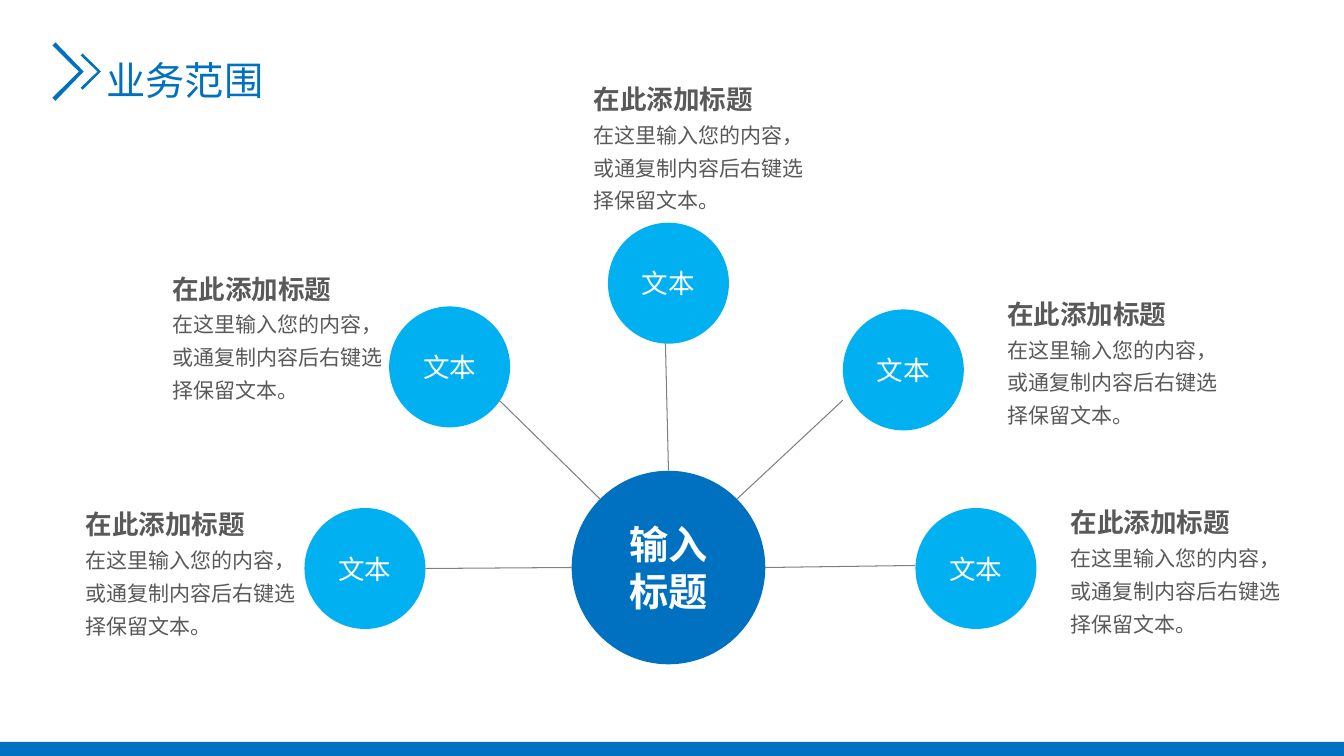
from lxml.etree import SubElement
from pptx import Presentation
from pptx.dml.color import RGBColor
from pptx.enum.shapes import MSO_CONNECTOR, MSO_SHAPE
from pptx.enum.text import MSO_ANCHOR, MSO_AUTO_SIZE, PP_ALIGN
from pptx.oxml.ns import qn
from pptx.util import Inches, Pt

FONT = "Noto Sans CJK SC"
COLORS = {"blue": "0070C0", "sky": "00B0F0", "line": "808080",
          "text": "595959", "white": "FFFFFF"}
HEADING = "在此添加标题"
BODY = "在这里输入您的内容，或通复制内容后右键选择保留文本。"
NODE_SIZE = 1.2

# Each branch: circle corner, line start, line end at the hub, note corner
BRANCHES = [
    ((3.02, 5.04), (4.22, 5.64), (5.67, 5.63), (0.75, 4.9)),
    ((3.86, 3.04), (4.95, 3.97), (5.95, 4.95), (1.61, 2.56)),
    ((6.03, 2.21), (6.6, 3.41), (6.63, 4.67), (5.79, 0.68)),
    ((8.36, 3.07), (8.36, 3.97), (7.31, 4.95), (9.89, 2.81)),
    ((9.08, 5.04), (9.08, 5.61), (7.59, 5.63), (10.52, 4.88)),
]


def rgb(name):
    return RGBColor.from_string(COLORS[name])


def write(p, text, size, color, bold=False, align=None, spacing=None):
    p.alignment = align
    p.line_spacing = spacing
    r = p.add_run()
    r.text = text
    r.font.size = Pt(size)
    r.font.bold = bold
    r.font.name = FONT
    r.font.color.rgb = rgb(color)
    SubElement(r.font._element, qn("a:ea")).set("typeface", FONT)


def paint(sp, color):
    sp.shadow.inherit = False
    sp.fill.solid()
    sp.fill.fore_color.rgb = rgb(color)
    sp.line.fill.background()


def add_block(s, kind, x, y, w, h, color):
    sp = s.shapes.add_shape(kind, Inches(x), Inches(y), Inches(w), Inches(h))
    paint(sp, color)
    return sp


def add_circle(s, x, y, size, color, text, points, bold=False):
    tf = add_block(s, MSO_SHAPE.OVAL, x, y, size, size, color).text_frame
    tf.word_wrap = True
    tf.vertical_anchor = MSO_ANCHOR.MIDDLE
    write(tf.paragraphs[0], text, points, "white", bold, PP_ALIGN.CENTER)


def add_text_box(s, x, y, w, h, wrap=True):
    box = s.shapes.add_textbox(Inches(x), Inches(y), Inches(w), Inches(h))
    tf = box.text_frame
    tf.word_wrap = wrap
    tf.auto_size = MSO_AUTO_SIZE.SHAPE_TO_FIT_TEXT
    return tf


def add_note(s, x, y):
    tf = add_text_box(s, x, y, 2.3, 1.5)
    write(tf.paragraphs[0], HEADING, 19, "text", bold=True, spacing=1.3)
    write(tf.add_paragraph(), BODY, 15, "text", spacing=1.3)


def add_line(s, start, end):
    points = [Inches(v) for v in start + end]
    cxn = s.shapes.add_connector(MSO_CONNECTOR.STRAIGHT, *points)
    cxn.line.color.rgb = rgb("line")
    cxn.line.width = Pt(0.75)
    SubElement(cxn._element.spPr, qn("a:effectLst"))


def chevron(left, tip, half, thick, middle=0.71):
    """Outline of a right-pointing angle, clockwise from its upper end."""
    inner = tip - thick * 1.6
    outline = [(left + thick, middle - half), (tip, middle),
               (left + thick, middle + half), (left, middle + half - thick),
               (inner, middle), (left, middle - half + thick)]
    return [(Inches(x), Inches(y)) for x, y in outline]


def add_chevrons(s):
    small = chevron(0.8, 1, 0.18, 0.02)
    large = chevron(0.52, 0.83, 0.29, 0.03)
    fb = s.shapes.build_freeform(*small[0], scale=1.0)
    fb.add_line_segments(small[1:], close=True)
    fb.move_to(*large[0])
    fb.add_line_segments(large[1:], close=True)
    paint(fb.convert_to_shape(), "blue")


def main():
    prs = Presentation()
    prs.slide_width, prs.slide_height = Inches(13.33), Inches(7.5)
    s = prs.slides.add_slide(prs.slide_layouts[6])

    # Header and footer
    add_chevrons(s)
    add_block(s, MSO_SHAPE.RECTANGLE, 0, 7.36, 13.33, 0.14, "blue")
    title = add_text_box(s, 0.96, 0.28, 1.77, 0.72, wrap=False)
    write(title.paragraphs[0], "业务范围", 28, "blue", spacing=1.5)

    # Hub with its branches
    add_circle(s, 5.67, 4.67, 1.92, "blue", "输入标题", 28, bold=True)
    for node, start, end, note in BRANCHES:
        add_circle(s, *node, NODE_SIZE, "sky", "文本", 19)
        add_line(s, start, end)
        add_note(s, *note)

    prs.save("out.pptx")


if __name__ == "__main__":
    main()
